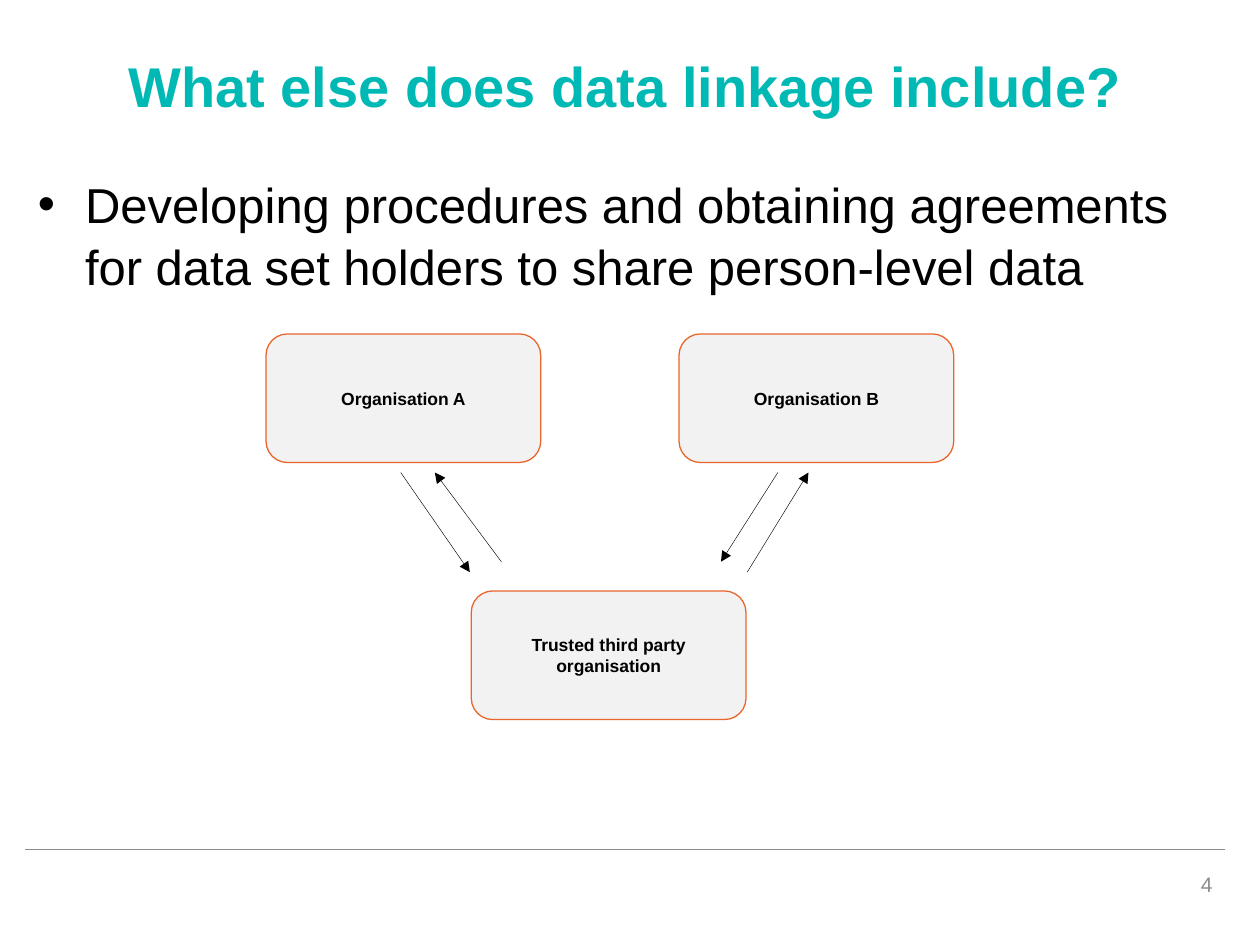
from lxml import etree
from pptx import Presentation
from pptx.dml.color import RGBColor
from pptx.enum.shapes import MSO_CONNECTOR, MSO_SHAPE
from pptx.enum.text import MSO_ANCHOR, MSO_AUTO_SIZE, PP_ALIGN
from pptx.oxml.ns import qn
from pptx.util import Pt

STRAIGHT = MSO_CONNECTOR.STRAIGHT
ROUNDED = MSO_SHAPE.ROUNDED_RECTANGLE
MIDDLE, TOP = MSO_ANCHOR.MIDDLE, MSO_ANCHOR.TOP
LEFT, CENTER, RIGHT = PP_ALIGN.LEFT, PP_ALIGN.CENTER, PP_ALIGN.RIGHT
FIXED = MSO_AUTO_SIZE.NONE

FONT = "Arial"
TEAL, ORANGE, BLACK = "00B9B5", "EA652C", "000000"
GREY, PALE = "8C8C8C", "F2F2F2"

MARGIN, CONTENT_WIDTH = 14.4, 686
BOX_WIDTH, BOX_HEIGHT = 157, 73.5
ORGANISATIONS = [
    ("Organisation A", 152, 190.8),
    ("Organisation B", 388, 190.8),
    ("Trusted third party organisation", 269.3, 337.7),
]
ARROW_TOP = 270
EXCHANGES = [
    (229, ARROW_TOP, 268.5, 327),
    (286.5, 321, 248.5, ARROW_TOP),
    (444.5, ARROW_TOP, 412, 321),
    (427, 327, 462, ARROW_TOP),
]


def color(value):
    return RGBColor.from_string(value)


def place(shape, left, top, width, height):
    shape.left, shape.top = Pt(left), Pt(top)
    shape.width, shape.height = Pt(width), Pt(height)


def write(shape, text, size, ink, align, anchor=MIDDLE, bold=False):
    frame = shape.text_frame
    frame.word_wrap = True
    frame.auto_size = FIXED
    frame.vertical_anchor = anchor
    para = frame.paragraphs[0]
    para.alignment = align
    span = para.add_run()
    span.text = text
    span.font.name = FONT
    span.font.size = Pt(size)
    span.font.bold = bold
    span.font.color.rgb = color(ink)
    return para


def add_bullet(para, indent):
    properties = para._p.get_or_add_pPr()
    properties.set("marL", str(Pt(indent)))
    properties.set("indent", str(-Pt(indent)))
    etree.SubElement(properties, qn("a:buFont")).set("typeface", FONT)
    etree.SubElement(properties, qn("a:buChar")).set("char", "•")


def add_organisation(page, name, left, top):
    box = page.shapes.add_shape(
        ROUNDED, Pt(left), Pt(top), Pt(BOX_WIDTH), Pt(BOX_HEIGHT))
    box.shadow.inherit = False
    box.fill.solid()
    box.fill.fore_color.rgb = color(PALE)
    box.line.color.rgb = color(ORANGE)
    box.line.width = Pt(0.75)
    frame = box.text_frame
    frame.margin_left = frame.margin_right = Pt(1.44)
    frame.margin_top = frame.margin_bottom = Pt(1.44)
    write(box, name, 10, BLACK, CENTER, bold=True)


def add_line(page, ends, ink, width, arrow=False):
    line = page.shapes.add_connector(STRAIGHT, *[Pt(end) for end in ends])
    line.line.color.rgb = color(ink)
    line.line.width = Pt(width)
    if arrow:
        outline = line.line._get_or_add_ln()
        etree.SubElement(outline, qn("a:tailEnd")).set("type", "triangle")
    etree.SubElement(line._element.spPr, qn("a:effectLst"))


def main():
    deck = Presentation()
    deck.slide_width, deck.slide_height = Pt(720), Pt(540)
    page = deck.slides.add_slide(deck.slide_layouts[1])

    add_line(page, (MARGIN, 485.3, 700, 485.3), GREY, 0.75)

    title, body = page.placeholders
    place(title, MARGIN, 3.6, CONTENT_WIDTH, 90)
    write(title, "What else does data linkage include?", 32, TEAL, CENTER,
          bold=True)

    place(body, MARGIN, 94.3, CONTENT_WIDTH, 385)
    para = write(
        body,
        "Developing procedures and obtaining agreements "
        "for data set holders to share person-level data",
        28, BLACK, LEFT, TOP)
    add_bullet(para, 27)
    para.space_before = Pt(0)
    para.line_spacing = 1.05

    number = page.shapes.add_textbox(Pt(532), Pt(491), Pt(168), Pt(28.8))
    write(number, "4", 12, GREY, RIGHT)

    for name, left, top in ORGANISATIONS:
        add_organisation(page, name, left, top)
    for ends in EXCHANGES:
        add_line(page, ends, BLACK, 0.25, arrow=True)

    deck.save("out.pptx")


if __name__ == "__main__":
    main()
